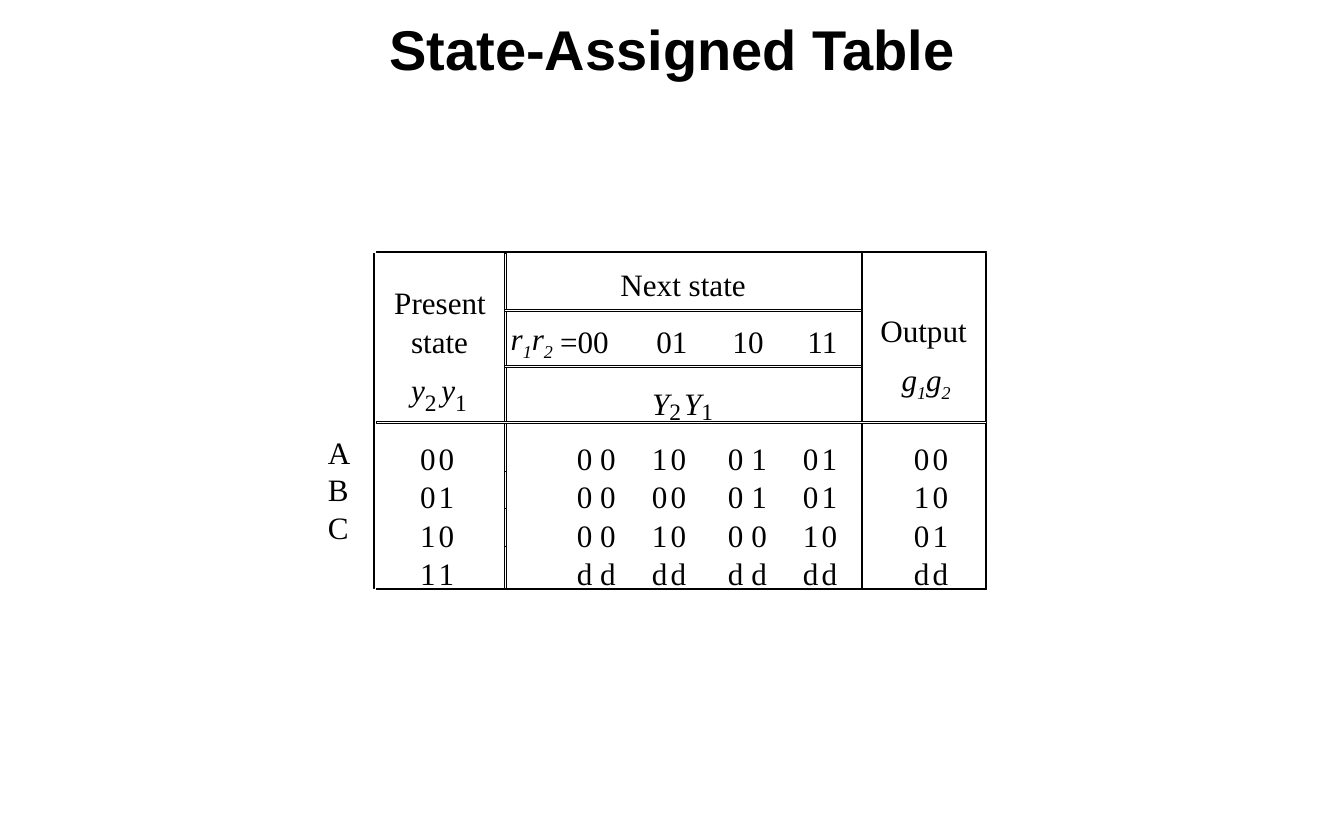
from itertools import accumulate

from pptx import Presentation
from pptx.dml.color import RGBColor
from pptx.enum.shapes import MSO_SHAPE as Shape
from pptx.enum.text import MSO_ANCHOR as Anchor, PP_ALIGN as Align
from pptx.util import Inches, Pt

BLACK = RGBColor(0, 0, 0)
WHITE = RGBColor(255, 255, 255)
SERIF = "Times New Roman"
NO_GRID = "{2D5ABB26-0587-4C30-8999-92F81FD0307C}"
SINGLE, DOUBLE = 0.01, 0.02  # thickness of the two kinds of rule

# Run styles: font values, and the baseline shift in thousandths of a percent
STYLES = {
    "title": (dict(name="Arial", size=Pt(36), bold=True), 0),
    "plain": (dict(name=SERIF, size=Pt(20)), 0),
    "var": (dict(name=SERIF, size=Pt(20), italic=True), 0),
    "index": (dict(name=SERIF, size=Pt(20), italic=True), -25000),
    "low": (dict(name=SERIF, size=Pt(26)), -27000),
    "sub": (dict(name=SERIF, size=Pt(26)), -11000),
    "gap": (dict(name=SERIF, size=Pt(8)), 0),
    "wide gap": (dict(name=SERIF, size=Pt(12)), 0),
}

COL_WIDTHS = [1.16, 1.25, 0.68, 0.67, 0.59, 1.11]
ROW_HEIGHTS = [0.53, 0.5, 0.5, 0.44, 0.33, 0.34, 0.37]
DATA_INDENTS = [0.41, 0.65, 0.07, 0.07, 0.07, 0.47]
SPACED_COLS = (1, 3)  # codes here have a full space between their digits
CODES = [
    ["00", "00", "10", "01", "01", "00"],
    ["01", "00", "00", "01", "01", "10"],
    ["10", "00", "10", "00", "10", "01"],
    ["11", "dd", "dd", "dd", "dd", "dd"],
]


def write(tf, paragraphs, align=Align.LEFT):
    """Fill a text frame; each paragraph is a list of (text, style) runs."""
    for i, runs in enumerate(paragraphs):
        p = tf.add_paragraph() if i else tf.paragraphs[0]
        p.alignment = align
        for text, style in runs:
            values, baseline = STYLES[style]
            r = p.add_run()
            r.text = text
            for name, value in values.items():
                setattr(r.font, name, value)
            r.font.color.rgb = BLACK
            if baseline:
                r._r.get_or_add_rPr().set("baseline", str(baseline))


def add_text(slide, box, paragraphs, wrap=True, **options):
    tf = slide.shapes.add_textbox(*map(Inches, box)).text_frame
    tf.word_wrap = wrap
    write(tf, paragraphs, **options)
    return tf


def add_label(slide, left, top, width, runs):
    """A line of text without margins."""
    tf = add_text(slide, (left, top, width, 0.34), [runs], wrap=False)
    tf.margin_left = tf.margin_top = tf.margin_right = tf.margin_bottom = 0


def add_rule(slide, left, top, width, height):
    sp = slide.shapes.add_shape(Shape.RECTANGLE, *map(Inches, (left, top, width, height)))
    sp.shadow.inherit = False
    sp.fill.solid()
    sp.fill.fore_color.rgb = WHITE
    sp.line.color.rgb = BLACK
    sp.line.width = Pt(0.5)


def fill_cell(cell, runs, top=0, left=0, **options):
    cell.margin_left, cell.margin_top = Inches(left), Inches(top)
    cell.margin_right = cell.margin_bottom = 0
    cell.vertical_anchor = Anchor.TOP
    write(cell.text_frame, [runs], **options)


def fill_header(table):
    for first, last in [((0, 0), (2, 0)), ((0, 5), (2, 5)), ((0, 1), (0, 4)), ((2, 1), (2, 4))]:
        table.cell(*first).merge(table.cell(*last))
    fill_cell(table.cell(0, 1), [("Next state", "plain")], top=0.16, left=0.01,
              align=Align.CENTER)
    fill_cell(table.cell(2, 1),
              [("Y", "var"), ("2", "sub"), (" ", "gap"), ("Y", "var"), ("1", "sub")],
              top=0.12, align=Align.CENTER)

    # Input values
    for col, (value, indent) in enumerate([("=00", 0.5), ("01", 0.11), ("10", 0.11),
                                           ("11", 0.11)], 1):
        fill_cell(table.cell(1, col), [(value, "plain")], top=0.14, left=indent)


def add_header_labels(slide, left, top):
    # Lines of the tall headings, and the input variables
    y_runs = [("y", "var"), ("2", "low"), (" ", "wide gap"), ("y", "var"), ("1", "low")]
    pairs = {v: [(v, "var"), ("1", "index"), (v, "var"), ("2", "index")] for v in "rg"}
    for dx, dy, width, runs in [
        (0.18, 0.29, 0.89, [("Present", "plain")]),
        (0.33, 0.64, 0.58, [("state", "plain")]),
        (0.33, 0.98, 0.58, y_runs),
        (1.22, 0.61, 0.4, pairs["r"]),
        (4.52, 0.54, 0.78, [("Output", "plain")]),
        (4.71, 0.98, 0.54, pairs["g"]),
    ]:
        add_label(slide, left + dx, top + dy, width, runs)


def fill_codes(table):
    for row, codes in enumerate(CODES, 3):
        for col, (a, b) in enumerate(codes):
            space = "plain" if col in SPACED_COLS else "gap"
            fill_cell(table.cell(row, col), [(a, "plain"), (" ", space), (b, "plain")],
                      top=0.12 if row == 3 else 0.01, left=DATA_INDENTS[col])


def add_rules(slide, xs, ys):
    # Vertical rules, one piece for each row
    for x, weight in [(xs[0] - 0.01, SINGLE), (xs[1], DOUBLE), (xs[5], SINGLE), (xs[6], SINGLE)]:
        for i, (y, height) in enumerate(zip(ys, ROW_HEIGHTS)):
            inset = 0 if i else 0.02
            add_rule(slide, x, y + inset, weight, height - inset)
    # Horizontal rules: full width, then under the next-state headings
    for y, weight in [(ys[0], SINGLE), (ys[3] - 0.01, DOUBLE), (ys[7], SINGLE)]:
        add_rule(slide, xs[0] + 0.02, y, xs[6] - xs[0] - 0.01, weight)
    for y in ys[1:3]:
        add_rule(slide, xs[1], y - 0.01, xs[5] - xs[1], DOUBLE)


def add_state_table(slide, left, top):
    xs = list(accumulate(COL_WIDTHS, initial=left))
    ys = list(accumulate(ROW_HEIGHTS, initial=top))
    box = map(Inches, (left, top, xs[-1] - left, ys[-1] - top))
    table = slide.shapes.add_table(len(ROW_HEIGHTS), len(COL_WIDTHS), *box).table
    table.first_row = table.horz_banding = False
    table._tbl.tblPr[0].text = NO_GRID
    for col, width in zip(table.columns, COL_WIDTHS):
        col.width = Inches(width)
    for row, height in zip(table.rows, ROW_HEIGHTS):
        row.height = Inches(height)
    for cell in table.iter_cells():
        cell.fill.background()
    fill_header(table)
    fill_codes(table)
    add_rules(slide, xs, ys)
    add_header_labels(slide, left, top)

    # State names beside the rows
    add_text(slide, (left - 0.51, ys[3] + 0.05, 0.41, 1.11),
             [[(name, "plain")] for name in "ABC"], wrap=False)


def add_title(slide, box):
    tf = add_text(slide, box, [[("State-Assigned Table", "title")]], align=Align.CENTER)
    tf.vertical_anchor = Anchor.MIDDLE


def main():
    prs = Presentation()
    prs.slide_width, prs.slide_height = Inches(12), Inches(7.5)
    slide = prs.slides.add_slide(prs.slide_layouts[6])
    add_title(slide, (1, 0.05, 10, 0.75))
    add_state_table(slide, 3.34, 2.24)
    prs.save("out.pptx")


if __name__ == "__main__":
    main()
